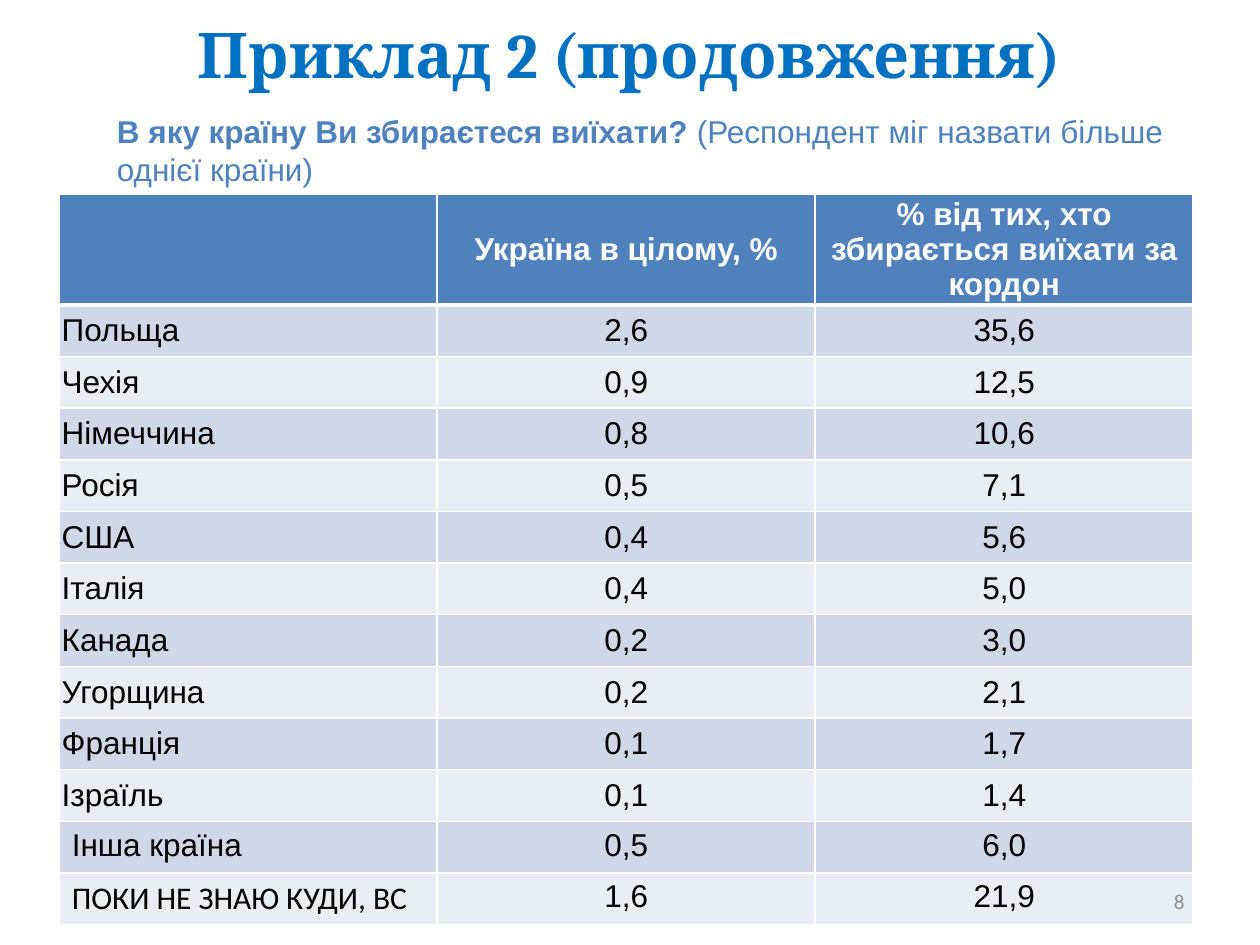
from dataclasses import dataclass

from lxml.etree import SubElement
from pptx import Presentation
from pptx.dml.color import RGBColor
from pptx.enum.text import MSO_ANCHOR, PP_ALIGN
from pptx.oxml.ns import qn
from pptx.util import Inches, Pt

COLORS = {
    "title": "0070C0",
    "accent": "4F81BD",
    "band_dark": "D0D8E8",
    "band_light": "E9EDF4",
    "white": "FFFFFF",
    "black": "000000",
    "page_number": "8C8C8C",
}


@dataclass(frozen=True)
class TextStyle:
    size: int
    color: str
    font: str = "Arial"
    bold: bool = False


@dataclass(frozen=True)
class TextBlock:
    left: float
    top: float
    width: float
    height: float
    runs: tuple[tuple[str, TextStyle], ...]
    align: PP_ALIGN = PP_ALIGN.LEFT
    anchor: MSO_ANCHOR = MSO_ANCHOR.MIDDLE


@dataclass(frozen=True)
class Country:
    name: str
    overall: str
    leaving: str
    font: str = "Arial"
    tight: bool = True


HEADER_STYLE = TextStyle(18, "white", bold=True)
BODY_STYLE = TextStyle(18, "black")

TEXT_BLOCKS = (
    TextBlock(0.9, 0, 8.19, 0.84,
              (("Приклад 2 (продовження)", TextStyle(36, "title", "Cambria", True)),),
              align=PP_ALIGN.CENTER),
    TextBlock(0.83, 0.84, 8.67, 0.71,
              (("В яку країну Ви збираєтеся виїхати? ", TextStyle(18, "accent", bold=True)),
               ("(Респондент міг назвати більше однієї країни)", TextStyle(18, "accent"))),
              anchor=MSO_ANCHOR.TOP),
    TextBlock(7.17, 6.95, 2.33, 0.4,
              (("8", TextStyle(12, "page_number", "Calibri")),),
              align=PP_ALIGN.RIGHT),
)

HEADERS = ("", "Україна в цілому, %", "% від тих, хто збирається виїхати за кордон")
COUNTRIES = (
    Country("Польща", "2,6", "35,6"),
    Country("Чехія", "0,9", "12,5"),
    Country("Німеччина", "0,8", "10,6"),
    Country("Росія", "0,5", "7,1"),
    Country("США", "0,4", "5,6"),
    Country("Італія", "0,4", "5,0"),
    Country("Канада", "0,2", "3,0"),
    Country("Угорщина", "0,2", "2,1"),
    Country("Франція", "0,1", "1,7"),
    Country("Ізраїль", "0,1", "1,4"),
    Country("Інша країна", "0,5", "6,0", tight=False),
    Country("ПОКИ НЕ ЗНАЮ КУДИ, ВС", "1,6", "21,9", font="Calibri", tight=False),
)
ROW_HEIGHT = 0.41
COLUMN_WIDTH = 3
TIGHT_MARGIN = 0.02


def add_run(paragraph, text: str, style: TextStyle) -> None:
    run = paragraph.add_run()
    run.text = text
    values = {"size": Pt(style.size), "name": style.font, "bold": style.bold}
    for name, value in values.items():
        setattr(run.font, name, value)
    run.font.color.rgb = RGBColor.from_string(COLORS[style.color])


def add_text_block(slide, block: TextBlock) -> None:
    box = slide.shapes.add_textbox(Inches(block.left), Inches(block.top),
                                   Inches(block.width), Inches(block.height))
    frame = box.text_frame
    frame.word_wrap = True
    frame.vertical_anchor = block.anchor
    paragraph = frame.paragraphs[0]
    paragraph.alignment = block.align
    for text, style in block.runs:
        add_run(paragraph, text, style)


def set_borders(cell, bottom_width: int) -> None:
    properties = cell._tc.get_or_add_tcPr()
    widths = {"a:lnL": 1, "a:lnR": 1, "a:lnT": 1, "a:lnB": bottom_width}
    for position, (tag, width) in enumerate(widths.items()):
        line = SubElement(properties, qn(tag), w=str(Pt(width)))
        fill = SubElement(line, qn("a:solidFill"))
        SubElement(fill, qn("a:srgbClr"), val=COLORS["white"])
        properties.insert(position, line)  # borders come before the cell fill


def fill_cell(cell, text: str, style: TextStyle, fill: str, align: PP_ALIGN,
              tight: bool, bottom_width: int = 1) -> None:
    cell.fill.solid()
    cell.fill.fore_color.rgb = RGBColor.from_string(COLORS[fill])
    set_borders(cell, bottom_width)
    if tight:
        cell.vertical_anchor = MSO_ANCHOR.MIDDLE
        for side in ("left", "top", "right", "bottom"):
            setattr(cell, f"margin_{side}", Inches(TIGHT_MARGIN))
    paragraph = cell.text_frame.paragraphs[0]
    paragraph.alignment = align
    if text:
        add_run(paragraph, text, style)


def add_country_table(slide) -> None:
    row_count, column_count = len(COUNTRIES) + 1, len(HEADERS)
    table = slide.shapes.add_table(
        row_count, column_count, Inches(0.47), Inches(1.54),
        Inches(COLUMN_WIDTH * column_count), Inches(ROW_HEIGHT * row_count)).table

    # Header row
    for column, text in enumerate(HEADERS):
        fill_cell(table.cell(0, column), text, HEADER_STYLE, "accent",
                  PP_ALIGN.CENTER, tight=True, bottom_width=3)

    # Banded country rows
    for row, country in enumerate(COUNTRIES, start=1):
        fill = "band_dark" if row % 2 else "band_light"
        name_style = TextStyle(18, "black", country.font)
        fill_cell(table.cell(row, 0), country.name, name_style, fill,
                  PP_ALIGN.LEFT, country.tight)
        for column, value in enumerate((country.overall, country.leaving), start=1):
            fill_cell(table.cell(row, column), value, BODY_STYLE, fill,
                      PP_ALIGN.CENTER, country.tight)


def main() -> None:
    presentation = Presentation()
    presentation.slide_width = Inches(10)
    presentation.slide_height = Inches(7.5)
    slide = presentation.slides.add_slide(presentation.slide_layouts[6])

    # Table first, so that the page number lies on top of it
    add_country_table(slide)
    for block in TEXT_BLOCKS:
        add_text_block(slide, block)

    presentation.save("out.pptx")


if __name__ == "__main__":
    main()
